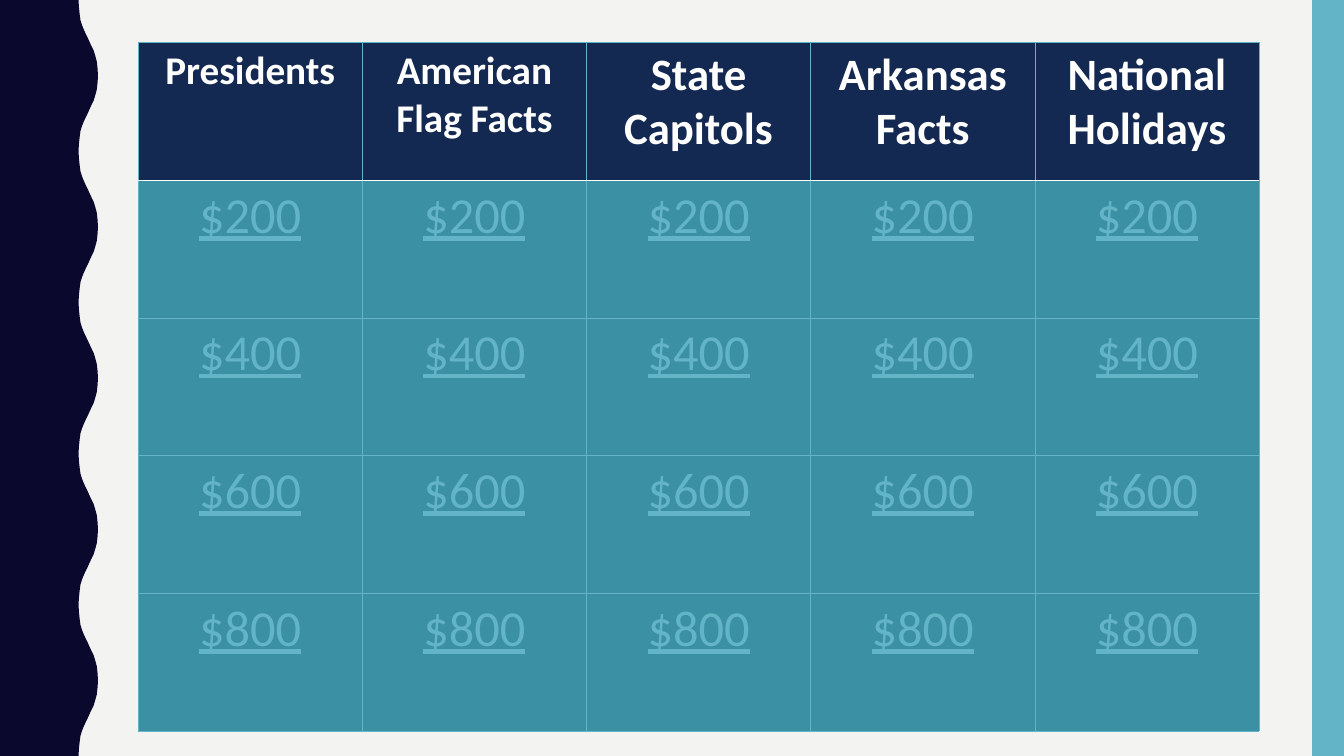
import dataclasses

import pptx
import pptx.dml.color
import pptx.enum.shapes
import pptx.enum.text
import pptx.oxml
import pptx.oxml.ns
import pptx.util
from pptx.util import Cm

RGBColor = pptx.dml.color.RGBColor
PAPER = RGBColor(0xF3, 0xF3, 0xF2)
MIDNIGHT = RGBColor(0x0B, 0x08, 0x2E)
NAVY = RGBColor(0x14, 0x29, 0x52)
TEAL = RGBColor(0x3B, 0x90, 0xA3)
SKY = RGBColor(0x62, 0xB4, 0xC6)
WHITE = RGBColor(0xFF, 0xFF, 0xFF)

SLIDE_W, SLIDE_H = 33.87, 19.05
WAVE_COUNT = 5
WAVE_H = SLIDE_H / WAVE_COUNT
HALF_WAVE = [
    (1.98, 0), (1.99, 0.18), (2.01, 0.36), (2.03, 0.51), (2.07, 0.64),
    (2.11, 0.74), (2.16, 0.85), (2.21, 0.95), (2.26, 1.06), (2.31, 1.17),
    (2.36, 1.27), (2.4, 1.4), (2.44, 1.55), (2.46, 1.73), (2.47, 1.91),
]
COL_W, ROW_H = 5.65, 3.47


@dataclasses.dataclass(frozen=True)
class CellStyle:
    fill: RGBColor
    color: RGBColor
    bold: bool
    underline: bool


@dataclasses.dataclass(frozen=True)
class Category:
    name: str
    size: int


HEADER = CellStyle(NAVY, WHITE, True, False)
PRIZE = CellStyle(TEAL, SKY, False, True)
CATEGORIES = [
    Category("Presidents", 28),
    Category("American Flag Facts", 28),
    Category("State Capitols", 32),
    Category("Arkansas Facts", 32),
    Category("National Holidays", 32),
]
PRIZES = ["$200", "$400", "$600", "$800"]
PRIZE_SIZE = 36


def paint(sp, color: RGBColor) -> None:
    sp.shadow.inherit = False
    sp.fill.solid()
    sp.fill.fore_color.rgb = color
    sp.line.fill.background()


def add_wavy_edge(s) -> None:
    mirrored = [(x, WAVE_H - y) for x, y in HALF_WAVE[-2::-1]]
    points = [(x, y + i * WAVE_H)
              for i in range(WAVE_COUNT) for x, y in HALF_WAVE + mirrored]
    points.append((0, SLIDE_H))
    builder = s.shapes.build_freeform(0, 0)
    builder.add_line_segments([(Cm(x), Cm(y)) for x, y in points], close=True)
    paint(builder.convert_to_shape(), MIDNIGHT)


def add_side_bar(s) -> None:
    left = 33.07
    sp = s.shapes.add_shape(pptx.enum.shapes.MSO_SHAPE.RECTANGLE,
                            Cm(left), 0, Cm(SLIDE_W - left), Cm(SLIDE_H))
    paint(sp, SKY)


def set_border(cell, side: str, color: RGBColor, width: float) -> None:
    """Append one side's line; call in the order L, R, T, B and before the fill."""
    cell._tc.get_or_add_tcPr().append(pptx.oxml.parse_xml(
        f'<a:ln{side} {pptx.oxml.ns.nsdecls("a")} w="{pptx.util.Pt(width)}">'
        f'<a:solidFill><a:srgbClr val="{color}"/></a:solidFill></a:ln{side}>'))


def fill_cell(cell, text: str, size: int, style: CellStyle) -> None:
    cell.fill.solid()
    cell.fill.fore_color.rgb = style.fill
    p = cell.text_frame.paragraphs[0]
    p.alignment = pptx.enum.text.PP_ALIGN.CENTER
    r = p.add_run()
    r.text = text
    r.font.name = "Calibri"
    r.font.size = pptx.util.Pt(size)
    r.font.bold = style.bold
    r.font.underline = style.underline
    r.font.color.rgb = style.color


def add_board(s) -> None:
    rows, cols = len(PRIZES) + 1, len(CATEGORIES)
    table = s.shapes.add_table(rows, cols, Cm(3.48), Cm(1.07),
                               Cm(COL_W * cols), Cm(ROW_H * rows)).table
    table.first_row = table.horz_banding = False
    for column in table.columns:
        column.width = Cm(COL_W)
    for i, row in enumerate(table.rows):
        row.height = Cm(ROW_H)
        for category, cell in zip(CATEGORIES, row.cells):
            for side in "LRTB":
                under_header = (i, side) in ((0, "B"), (1, "T"))
                set_border(cell, side, *((WHITE, 1) if under_header else (SKY, 0.5)))
            if i == 0:
                fill_cell(cell, category.name, category.size, HEADER)
            else:
                fill_cell(cell, PRIZES[i - 1], PRIZE_SIZE, PRIZE)


def main() -> None:
    prs = pptx.Presentation()
    prs.slide_width, prs.slide_height = Cm(SLIDE_W), Cm(SLIDE_H)
    s = prs.slides.add_slide(prs.slide_layouts[6])
    s.background.fill.solid()
    s.background.fill.fore_color.rgb = PAPER
    add_wavy_edge(s)
    add_side_bar(s)
    add_board(s)
    prs.save("out.pptx")


if __name__ == "__main__":
    main()
